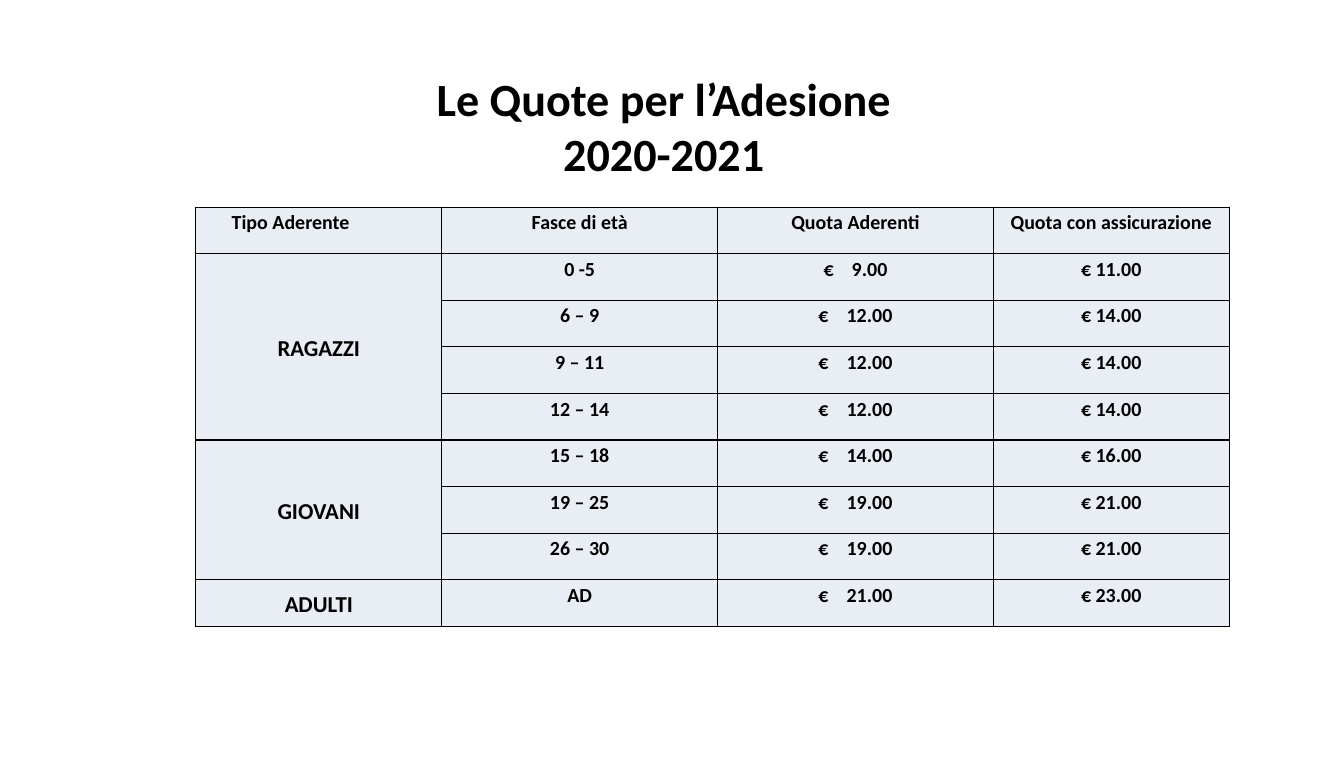
from lxml import etree
from pptx import Presentation
from pptx.dml.color import RGBColor
from pptx.enum.text import MSO_ANCHOR, PP_ALIGN
from pptx.oxml.ns import qn
from pptx.util import Inches, Pt

CENTER = PP_ALIGN.CENTER
TOP, MIDDLE = MSO_ANCHOR.TOP, MSO_ANCHOR.MIDDLE
TITLE_ONLY = 5
BLACK, PALE_BLUE = "000000", "E9EDF4"
TEXT_FORMAT = {"name": "Calibri", "bold": True}

TITLE = "Le Quote per l’Adesione\v2020-2021"
HEADERS = ["Tipo Aderente", "Fasce di età", "Quota Aderenti", "Quota con assicurazione"]
COLUMN_WIDTHS = [2.4, 2.69, 2.69, 2.3]
MEMBER_GROUPS = {
    "RAGAZZI": [
        ("0 -5", "9.00", "11.00"),
        ("6 – 9", "12.00", "14.00"),
        ("9 – 11", "12.00", "14.00"),
        ("12 – 14", "12.00", "14.00"),
    ],
    "GIOVANI": [
        ("15 – 18", "14.00", "16.00"),
        ("19 – 25", "19.00", "21.00"),
        ("26 – 30", "19.00", "21.00"),
    ],
    "ADULTI": [("AD", "21.00", "23.00")],
}


def color(hex_string):
    return RGBColor.from_string(hex_string)


def format_font(font, size):
    for name, value in {**TEXT_FORMAT, "size": Pt(size)}.items():
        setattr(font, name, value)
    font.color.rgb = color(BLACK)


def add_title(slide, left, top, width, height):
    title = slide.shapes.title
    box = {"left": left, "top": top, "width": width, "height": height}
    for name, value in box.items():
        setattr(title, name, Inches(value))
    frame = title.text_frame
    frame.text = TITLE
    frame.word_wrap = True
    frame.vertical_anchor = MIDDLE
    paragraph = frame.paragraphs[0]
    paragraph.alignment = CENTER
    for run in paragraph.runs:
        format_font(run.font, 32.4)


def style_cell(cell):
    """Clear the insets, draw a black border on all sides and fill the cell."""
    for side in ("left", "right", "top", "bottom"):
        setattr(cell, f"margin_{side}", 0)
    properties = cell._tc.get_or_add_tcPr()
    for edge in ("a:lnL", "a:lnR", "a:lnT", "a:lnB"):
        line = etree.SubElement(properties, qn(edge), w=str(Pt(1)))
        fill = etree.SubElement(line, qn("a:solidFill"))
        etree.SubElement(fill, qn("a:srgbClr"), val=BLACK)
    cell.fill.solid()
    cell.fill.fore_color.rgb = color(PALE_BLUE)


def write_cell(cell, pieces, size=14, anchor=TOP):
    """Write the pieces as runs; a piece is a text and its extra letter spacing in points."""
    cell.vertical_anchor = anchor
    paragraph = cell.text_frame.paragraphs[0]
    paragraph.alignment = CENTER
    paragraph.line_spacing = 1.15
    for text, spacing in pieces:
        run = paragraph.add_run()
        run.text = text
        format_font(run.font, size)
        if spacing:
            run._r.get_or_add_rPr().set("spc", str(int(spacing * 100)))


def add_fee_table(slide, left, top, width, height):
    row_count = 1 + sum(len(fees) for fees in MEMBER_GROUPS.values())
    table = slide.shapes.add_table(
        row_count, len(HEADERS), Inches(left), Inches(top), Inches(width), Inches(height)
    ).table
    for column, column_width in zip(table.columns, COLUMN_WIDTHS):
        column.width = Inches(column_width)
    for cell in table.iter_cells():
        style_cell(cell)

    for column_index, header in enumerate(HEADERS):
        write_cell(table.cell(0, column_index), [(header, 0)])
    table.cell(0, 0).margin_right = Inches(0.55)

    row = 1
    for group, fees in MEMBER_GROUPS.items():
        group_cell = table.cell(row, 0)
        if len(fees) > 1:
            group_cell.merge(table.cell(row + len(fees) - 1, 0))
        write_cell(group_cell, [(group, 0)], 16, MIDDLE)
        for age_range, member_fee, insured_fee in fees:
            write_cell(table.cell(row, 1), [(age_range, 0)])
            write_cell(table.cell(row, 2), [("€", 0), (" ", 9.5), (member_fee, 0)])
            write_cell(table.cell(row, 3), [(f"€ {insured_fee}", 0)])
            row += 1


def main():
    presentation = Presentation()
    presentation.slide_width = Inches(13.11)
    presentation.slide_height = Inches(7.5)
    slide = presentation.slides.add_slide(presentation.slide_layouts[TITLE_ONLY])
    add_title(slide, 0.49, 0.6, 11.97, 1.25)
    add_fee_table(slide, 1.91, 2.02, 10.08, 4.09)
    presentation.save("out.pptx")


if __name__ == "__main__":
    main()
